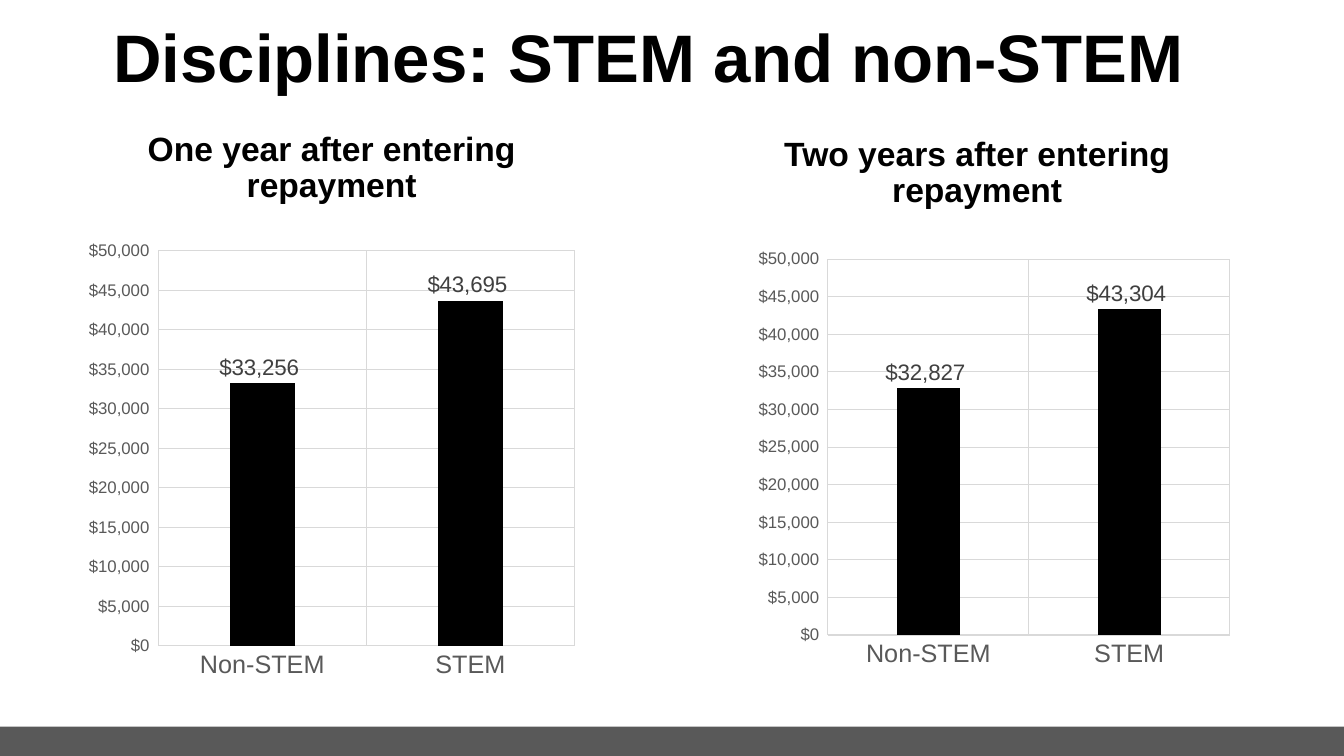
"""Build a slide comparing STEM and non-STEM earnings in two column charts."""
from dataclasses import dataclass
from typing import Optional

from lxml import etree
from pptx import Presentation
from pptx.chart.axis import CategoryAxis, ValueAxis
from pptx.chart.chart import Chart
from pptx.chart.data import CategoryChartData
from pptx.dml.color import RGBColor
from pptx.enum.chart import XL_CHART_TYPE, XL_LABEL_POSITION, XL_TICK_MARK
from pptx.enum.shapes import MSO_SHAPE
from pptx.enum.text import MSO_ANCHOR, MSO_AUTO_SIZE, PP_ALIGN
from pptx.oxml.ns import qn
from pptx.slide import Slide
from pptx.text.text import Font, TextFrame
from pptx.util import Pt

COLUMNS = XL_CHART_TYPE.COLUMN_CLUSTERED
OUTSIDE_END = XL_LABEL_POSITION.OUTSIDE_END
NO_TICK = XL_TICK_MARK.NONE
RECTANGLE = MSO_SHAPE.RECTANGLE
MIDDLE = MSO_ANCHOR.MIDDLE
FIXED_SIZE = MSO_AUTO_SIZE.NONE
CENTER = PP_ALIGN.CENTER

BLACK = RGBColor(0x00, 0x00, 0x00)
LABEL_GRAY = RGBColor(0x40, 0x40, 0x40)
DARK_GRAY = RGBColor(0x59, 0x59, 0x59)
GRID_GRAY = RGBColor(0xD9, 0xD9, 0xD9)

FONT = "Arial"
DOLLARS = '"$"#,##0_);[Red]\\("$"#,##0\\)'
PAGE_WIDTH, PAGE_HEIGHT = 960, 540
BAR_HEIGHT = 21
CHART_TOP, CHART_WIDTH, CHART_HEIGHT = 166.3, 361.4, 324.7


@dataclass(frozen=True)
class Frame:
    """Position and size in points."""
    left: float
    top: float
    width: float
    height: float


@dataclass(frozen=True)
class Panel:
    """A heading and the chart below it."""
    heading: str
    heading_frame: Frame
    chart_left: float
    earnings: tuple[int, int]
    plot_frame: Optional[Frame] = None


TITLE_FRAME = Frame(15.1, 13, 897.1, 61.2)
PANELS = (
    Panel("One year after entering repayment", Frame(43.9, 86.4, 386, 67.7),
          56.2, (33256, 43695)),
    Panel("Two years after entering repayment", Frame(491, 93.6, 414, 61.2),
          527.8, (32827, 43304), Frame(0.176, 0.058, 0.794, 0.827)),
)


def style_font(font: Font, size: float, color: RGBColor, bold: bool = False) -> None:
    """Apply the slide's typeface with a size, colour and weight."""
    font.name = FONT
    font.size = Pt(size)
    font.bold = bold
    font.color.rgb = color


def write_heading(text_frame: TextFrame, text: str, size: float) -> None:
    """Write one centred bold paragraph."""
    text_frame.text = text
    text_frame.word_wrap = True
    text_frame.auto_size = FIXED_SIZE
    text_frame.vertical_anchor = MIDDLE
    para = text_frame.paragraphs[0]
    para.alignment = CENTER
    para.line_spacing = 0.9
    para.space_before = Pt(0)
    style_font(para.runs[0].font, size, BLACK, bold=True)


def add_title(page: Slide) -> None:
    """Fill and place the title placeholder."""
    title = page.shapes.title
    title.left, title.top = Pt(TITLE_FRAME.left), Pt(TITLE_FRAME.top)
    title.width, title.height = Pt(TITLE_FRAME.width), Pt(TITLE_FRAME.height)
    write_heading(title.text_frame, "Disciplines: STEM and non-STEM", 48)


def add_bottom_bar(page: Slide) -> None:
    """Draw the band along the bottom edge."""
    bar = page.shapes.add_shape(RECTANGLE, Pt(0), Pt(PAGE_HEIGHT - BAR_HEIGHT),
                                Pt(PAGE_WIDTH), Pt(BAR_HEIGHT))
    bar.shadow.inherit = False
    bar.fill.solid()
    bar.fill.fore_color.rgb = DARK_GRAY
    bar.line.fill.background()


def style_axis(axis: CategoryAxis | ValueAxis, size: float) -> None:
    """Give an axis light gridlines, gray labels and no ticks."""
    axis.major_tick_mark = NO_TICK
    axis.minor_tick_mark = NO_TICK
    axis.has_major_gridlines = True
    grid = axis.major_gridlines.format.line
    grid.color.rgb = GRID_GRAY
    grid.width = Pt(0.75)
    style_font(axis.tick_labels.font, size, DARK_GRAY)


def set_plot_frame(chart: Chart, frame: Frame) -> None:
    """Fix the inner plot area as fractions of the chart."""
    area = chart.plots[0]._element.getparent()
    for present in area.findall(qn("c:layout")):
        area.remove(present)
    layout = etree.Element(qn("c:layout"))
    manual = etree.SubElement(layout, qn("c:manualLayout"))
    settings = {"layoutTarget": "inner", "xMode": "edge", "yMode": "edge",
                "x": frame.left, "y": frame.top, "w": frame.width, "h": frame.height}
    for name, value in settings.items():
        etree.SubElement(manual, qn(f"c:{name}")).set("val", str(value))
    area.insert(0, layout)


def add_panel(page: Slide, panel: Panel) -> None:
    """Add a heading and its column chart."""
    frame = panel.heading_frame
    box = page.shapes.add_textbox(Pt(frame.left), Pt(frame.top),
                                  Pt(frame.width), Pt(frame.height))
    write_heading(box.text_frame, panel.heading, 24)

    data = CategoryChartData(number_format=DOLLARS)
    data.categories = ["Non-STEM", "STEM"]
    data.add_series("Series 1", panel.earnings)
    chart = page.shapes.add_chart(COLUMNS, Pt(panel.chart_left), Pt(CHART_TOP),
                                  Pt(CHART_WIDTH), Pt(CHART_HEIGHT), data).chart
    chart.has_title = False
    chart.has_legend = False
    style_font(chart.font, 10, BLACK)

    style_axis(chart.category_axis, 18)
    axis_line = chart.category_axis.format.line
    axis_line.color.rgb = GRID_GRAY
    axis_line.width = Pt(0.75)

    value_axis = chart.value_axis
    style_axis(value_axis, 12)
    value_axis.format.line.fill.background()
    value_axis.minimum_scale = 0
    value_axis.maximum_scale = 50000
    value_axis.major_unit = 5000
    value_axis.tick_labels.number_format = DOLLARS
    value_axis.tick_labels.number_format_is_linked = False

    plot = chart.plots[0]
    plot.gap_width = 219
    plot.overlap = -27
    plot.vary_by_categories = False
    fill = plot.series[0].format.fill
    fill.solid()
    fill.fore_color.rgb = BLACK
    labels = plot.series[0].data_labels
    labels.show_value = True
    labels.position = OUTSIDE_END
    labels.number_format = DOLLARS
    labels.number_format_is_linked = False
    style_font(labels.font, 16, LABEL_GRAY)
    if panel.plot_frame:
        set_plot_frame(chart, panel.plot_frame)


def main() -> None:
    """Assemble and save the deck."""
    deck = Presentation()
    deck.slide_width, deck.slide_height = Pt(PAGE_WIDTH), Pt(PAGE_HEIGHT)
    page = deck.slides.add_slide(deck.slide_layouts.get_by_name("Title Only"))
    add_bottom_bar(page)
    add_title(page)
    for panel in PANELS:
        add_panel(page, panel)
    deck.save("out.pptx")


if __name__ == "__main__":
    main()
